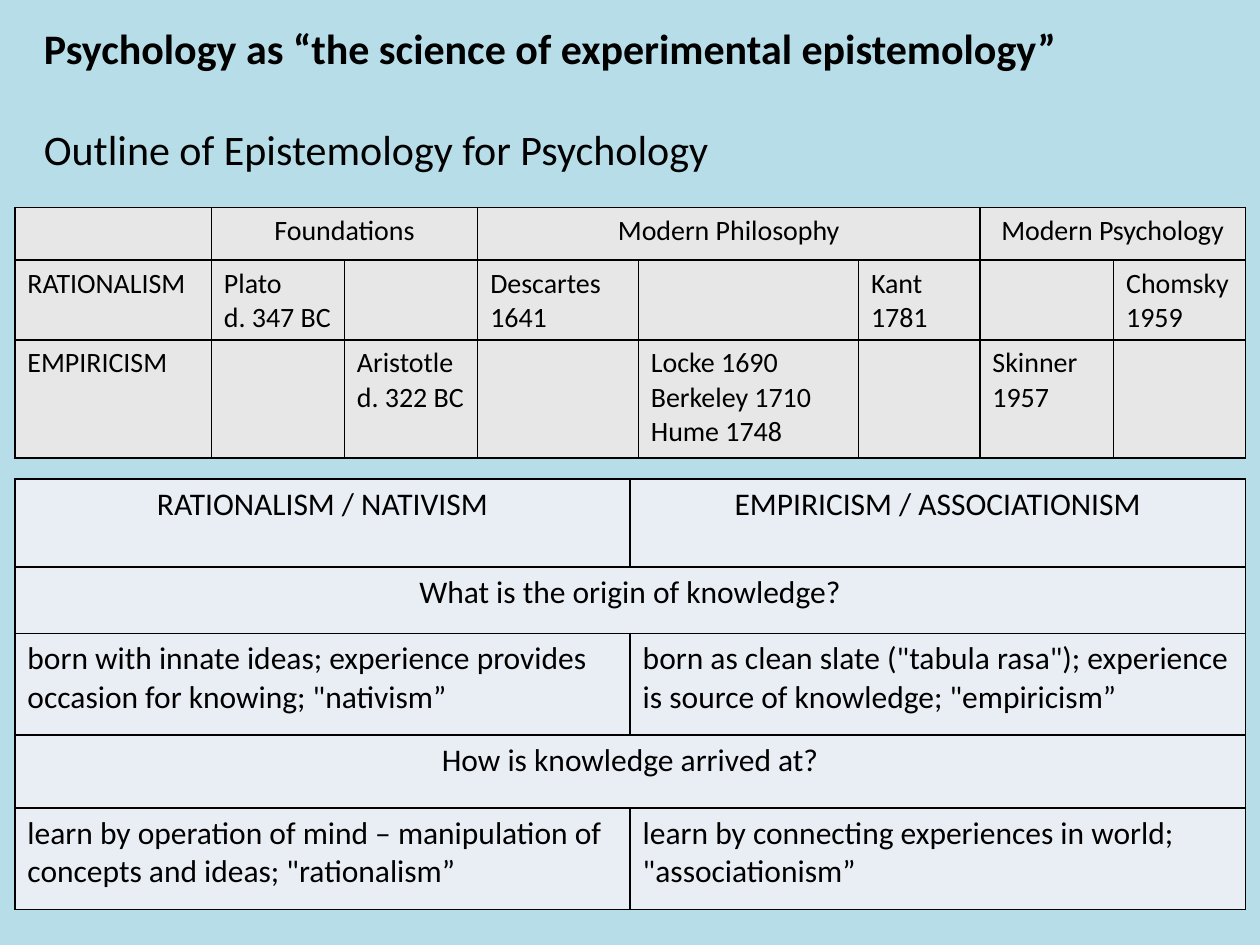
import pptx
import pptx.dml.color
import pptx.enum.text
import pptx.oxml
import pptx.oxml.ns
import pptx.util

Pt = pptx.util.Pt
RGBColor = pptx.dml.color.RGBColor
PP_ALIGN = pptx.enum.text.PP_ALIGN

BACKGROUND = RGBColor(0xB7, 0xDE, 0xE8)
BLACK = RGBColor(0x00, 0x00, 0x00)
TIMELINE_FILL = RGBColor(0xE7, 0xE7, 0xE7)
COMPARISON_FILL = RGBColor(0xE9, 0xED, 0xF4)
FONT = "Calibri"

TABLE_LEFT = 8.5

# Each cell is its text; "<" continues the cell to its left.
TIMELINE = [
    ["", "Foundations", "<", "Modern Philosophy", "<", "<",
     "Modern Psychology", "<"],
    ["RATIONALISM", "Plato\nd. 347 BC", "", "Descartes\n1641", "",
     "Kant\n1781", "", "Chomsky\n1959"],
    ["EMPIRICISM", "", "Aristotle\nd. 322 BC", "",
     "Locke 1690\nBerkeley 1710\nHume 1748", "", "Skinner\n1957", ""],
]
TIMELINE_COLUMNS = [112.3, 76, 76.2, 91.8, 125.8, 69.4, 76.4, 75.3]
TIMELINE_ROWS = [30, 45, 67.5]

COMPARISON = [
    ["RATIONALISM / NATIVISM", "EMPIRICISM / ASSOCIATIONISM"],
    ["What is the origin of knowledge?", "<"],
    ["born with innate ideas; experience provides occasion for knowing; "
     "\"nativism”",
     "born as clean slate (\"tabula rasa\"); experience is source of "
     "knowledge; \"empiricism”"],
    ["How is knowledge arrived at?", "<"],
    ["learn by operation of mind – manipulation of concepts and ideas; "
     "\"rationalism”",
     "learn by connecting experiences in world; \"associationism”"],
]
COMPARISON_COLUMNS = [351.6, 351.6]
COMPARISON_ROWS = [50.3, 37.8, 58, 42, 58]


def style_paragraph(paragraph, size, bold=False, align=PP_ALIGN.LEFT):
    paragraph.alignment = align
    font = paragraph.font
    font.name, font.size, font.bold = FONT, Pt(size), bold
    font.color.rgb = BLACK


def add_heading(slide):
    heading = slide.shapes.add_textbox(Pt(18), Pt(9.4), Pt(694), Pt(94.5))
    frame = heading.text_frame
    frame.word_wrap = True
    frame.text = ("Psychology as “the science of experimental epistemology”\n"
                  "Outline of Epistemology for Psychology")
    title, subtitle = frame.paragraphs
    style_paragraph(title, 24, bold=True)
    style_paragraph(subtitle, 24)
    subtitle.space_before = Pt(29)


def add_borders(cell):
    properties = cell._tc.get_or_add_tcPr()
    for position, side in enumerate("LRTB"):
        border = pptx.oxml.parse_xml(
            f'<a:ln{side} {pptx.oxml.ns.nsdecls("a")} w="{Pt(1)}">'
            f'<a:solidFill><a:srgbClr val="{BLACK}"/></a:solidFill>'
            f'</a:ln{side}>')
        properties.insert(position, border)


def add_grid(slide, top, columns, heights, content, size, fill, centred_rows):
    table = slide.shapes.add_table(
        len(heights), len(columns), Pt(TABLE_LEFT), Pt(top),
        Pt(sum(columns)), Pt(sum(heights))).table
    table.first_row = table.horz_banding = False
    for column, width in zip(table.columns, columns):
        column.width = Pt(width)

    for r, (height, texts) in enumerate(zip(heights, content)):
        table.rows[r].height = Pt(height)
        align = PP_ALIGN.CENTER if r in centred_rows else PP_ALIGN.LEFT
        for c, text in enumerate(texts):
            cell = table.cell(r, c)
            cell.fill.solid()
            cell.fill.fore_color.rgb = fill
            add_borders(cell)
            if text != "<":
                cell.text = text
            for paragraph in cell.text_frame.paragraphs:
                style_paragraph(paragraph, size, align=align)

        # Join each cell with the ones that continue it
        starts = [c for c, text in enumerate(texts) if text != "<"]
        for start, end in zip(starts, starts[1:] + [len(texts)]):
            if end - start > 1:
                table.cell(r, start).merge(table.cell(r, end - 1))


def main():
    presentation = pptx.Presentation()
    presentation.slide_width, presentation.slide_height = Pt(720), Pt(540)
    slide = presentation.slides.add_slide(presentation.slide_layouts[6])
    slide.background.fill.solid()
    slide.background.fill.fore_color.rgb = BACKGROUND

    add_heading(slide)
    # Timeline of thinkers
    add_grid(slide, 118.6, TIMELINE_COLUMNS, TIMELINE_ROWS, TIMELINE,
             16, TIMELINE_FILL, centred_rows={0})
    # Comparison of the two positions
    add_grid(slide, 273.8, COMPARISON_COLUMNS, COMPARISON_ROWS, COMPARISON,
             18, COMPARISON_FILL, centred_rows={0, 1, 3})

    presentation.save("out.pptx")


if __name__ == "__main__":
    main()
